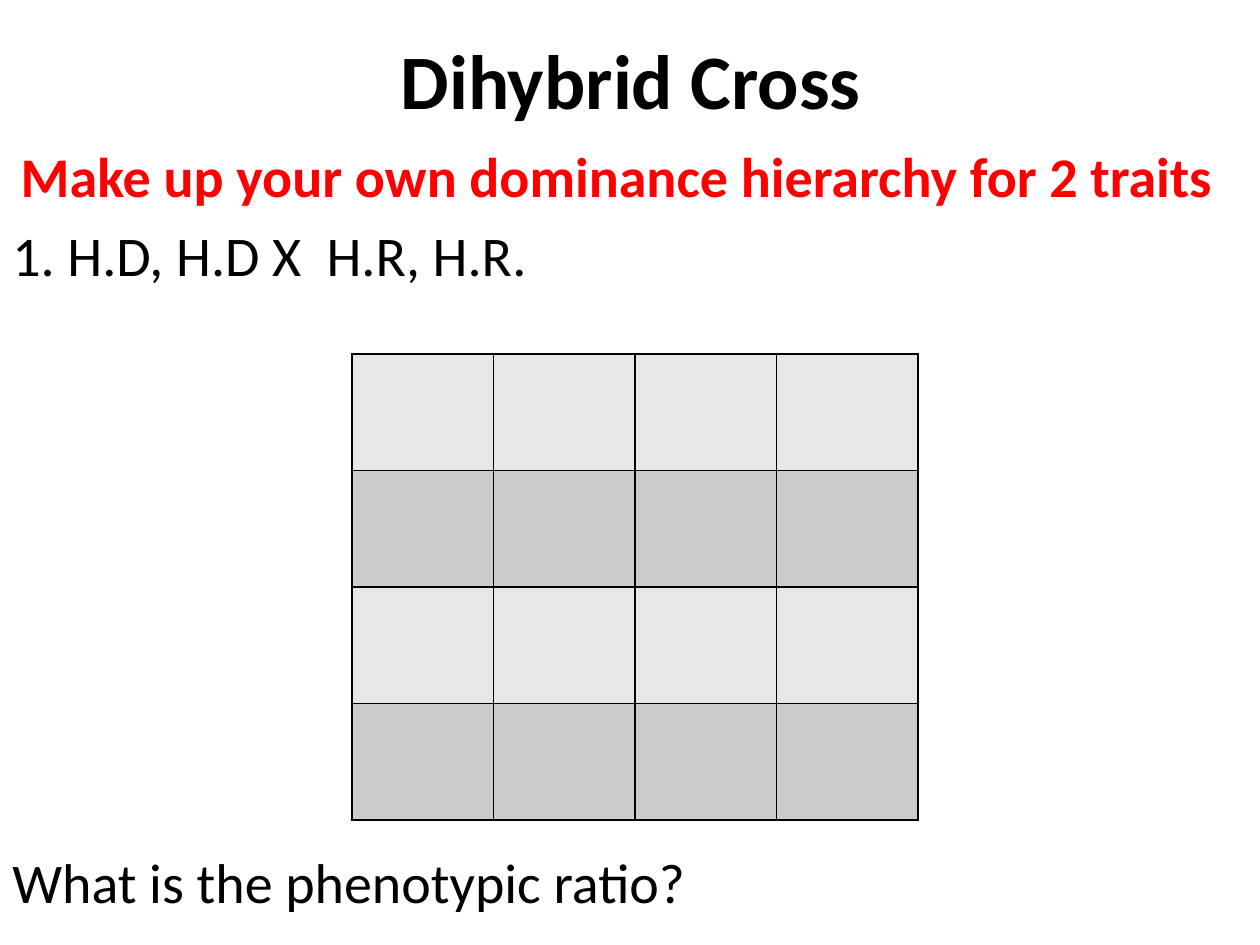
"""Build the Dihybrid Cross worksheet slide with its empty Punnett square."""

from dataclasses import dataclass

import lxml.etree
import pptx
import pptx.dml.color
import pptx.enum.text
import pptx.oxml.ns
import pptx.util

PX = 914400 // 126
FONT = "Calibri"
COLORS = {
    "black": "000000",
    "red": "FF0000",
    "light": "E7E7E7",
    "dark": "CCCCCC",
}
ALIGN = pptx.enum.text.PP_ALIGN
GRID_SIZE = 4
BORDER_WIDTH = pptx.util.Pt(1)


@dataclass(frozen=True)
class Line:
    text: str
    top: int
    width: int = 1260
    color: str = "black"
    bold: bool = False
    align: ALIGN = ALIGN.LEFT


LINES = [
    Line("Make up your own dominance hierarchy for 2 traits", 135, 1234, "red", True, ALIGN.CENTER),
    Line("1. H.D, H.D X  H.R, H.R.", 214),
    Line("What is the phenotypic ratio?", 841),
]


def rgb(name: str) -> pptx.dml.color.RGBColor:
    """Return a named palette color."""
    return pptx.dml.color.RGBColor.from_string(COLORS[name])


def place(shape, left: int, top: int, width: int, height: int) -> None:
    """Position a shape in px."""
    shape.left, shape.top = left * PX, top * PX
    shape.width, shape.height = width * PX, height * PX


def style(para, size: int, color: str, bold: bool, align: ALIGN) -> None:
    """Format one whole paragraph."""
    para.alignment = align
    para.font.name = FONT
    para.font.size = pptx.util.Pt(size)
    para.font.bold = bold
    para.font.color.rgb = rgb(color)


def add_title(page, text: str) -> None:
    """Fill and format the title placeholder."""
    title = page.shapes.title
    place(title, 64, 0, 1134, 158)
    title.text_frame.text = text
    title.text_frame.vertical_anchor = pptx.enum.text.MSO_ANCHOR.MIDDLE
    style(title.text_frame.paragraphs[0], 44, "black", True, ALIGN.CENTER)


def add_line(page, line: Line) -> None:
    """Add one line of body text."""
    box = page.shapes.add_textbox(0, line.top * PX, line.width * PX, 91 * PX)
    box.text_frame.word_wrap = True
    para = box.text_frame.paragraphs[0]
    para.text = line.text
    para.space_before = pptx.util.Pt(6.4)
    style(para, 32, line.color, line.bold, line.align)


def add_borders(cell) -> None:
    """Outline a cell on all four sides, ahead of its fill."""
    properties = cell._tc.get_or_add_tcPr()
    qn = pptx.oxml.ns.qn
    for index, side in enumerate(("lnL", "lnR", "lnT", "lnB")):
        border = lxml.etree.Element(qn(f"a:{side}"), w=str(BORDER_WIDTH))
        fill = lxml.etree.SubElement(border, qn("a:solidFill"))
        lxml.etree.SubElement(fill, qn("a:srgbClr"), val=COLORS["black"])
        properties.insert(index, border)


def add_square(page, left: int, top: int, width: int, height: int) -> None:
    """Add the empty Punnett square with alternating row fills."""
    frame = page.shapes.add_table(
        GRID_SIZE, GRID_SIZE, left * PX, top * PX, width * PX, height * PX
    )
    for row_index, row in enumerate(frame.table.rows):
        for cell in row.cells:
            cell.fill.solid()
            cell.fill.fore_color.rgb = rgb("dark" if row_index % 2 else "light")
            add_borders(cell)


def main() -> None:
    """Create and save the deck."""
    deck = pptx.Presentation()
    deck.slide_width, deck.slide_height = 1260 * PX, 945 * PX
    page = deck.slides.add_slide(deck.slide_layouts.get_by_name("Title Only"))
    add_title(page, "Dihybrid Cross")
    for line in LINES:
        add_line(page, line)
    add_square(page, 352, 354, 566, 466)
    deck.save("out.pptx")


if __name__ == "__main__":
    main()
